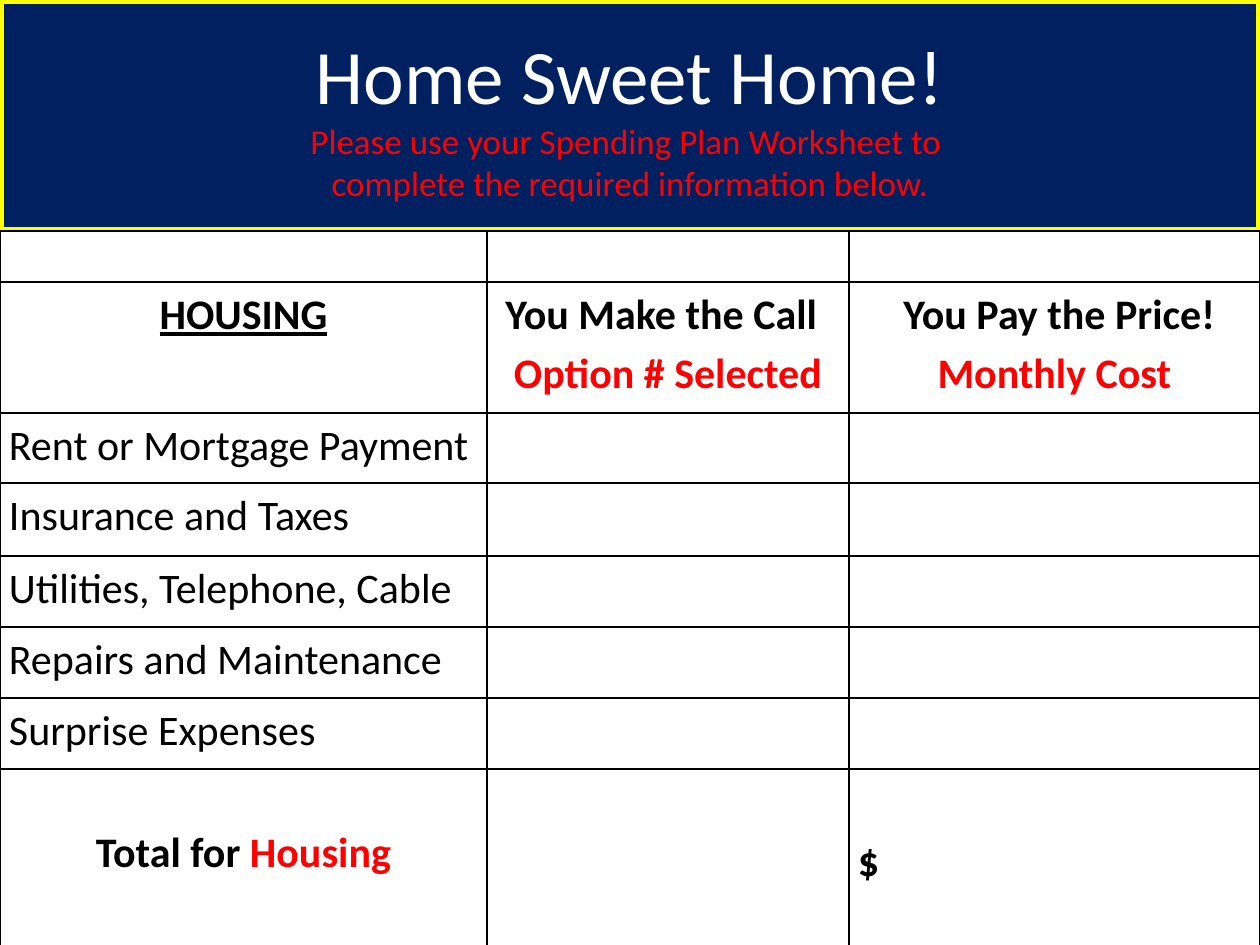
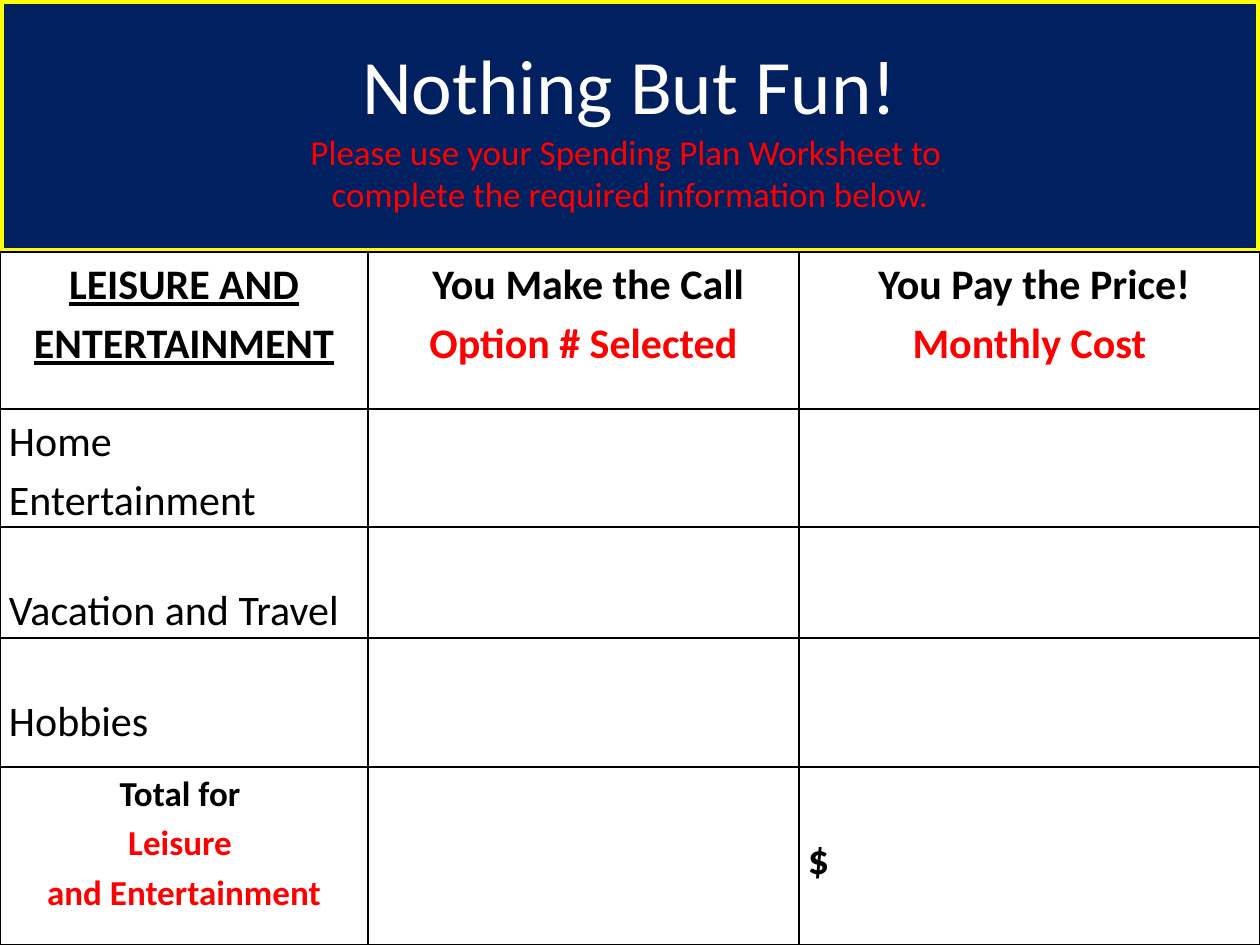
from lxml import etree
from pptx import Presentation
from pptx.dml.color import RGBColor
from pptx.enum.shapes import MSO_SHAPE
from pptx.enum.text import MSO_ANCHOR, PP_ALIGN
from pptx.oxml.ns import qn
from pptx.util import Emu, Pt

RECT = MSO_SHAPE.RECTANGLE
MIDDLE = MSO_ANCHOR.MIDDLE
LEFT, CENTER = PP_ALIGN.LEFT, PP_ALIGN.CENTER

# Shared look
EMU_PER_INCH, PX_PER_INCH = 914400, 126
SLIDE_W, SLIDE_H = 1260, 945
FONT = "Calibri"
COLORS = {
    "navy": "002060",
    "yellow": "FFFF00",
    "white": "FFFFFF",
    "black": "000000",
    "red": "FF0000",
}
INSTRUCTIONS = ["Please use your Spending Plan Worksheet to ",
                "complete the required information below."]
CELL_INSET = 9
LABEL_DROP, DOLLAR_DROP = 51, 60  # top insets of lowered cell text


def px(n):
    return Emu(round(n * EMU_PER_INCH / PX_PER_INCH))


def rgb(name):
    return RGBColor.from_string(COLORS[name])


def style_paragraph(p, size, color, align, bold=False):
    p.alignment = align
    p.font.name, p.font.size, p.font.bold = FONT, Pt(size), bold
    p.font.color.rgb = rgb(color)


# Title band
def add_title_band(slide, title, height):
    sp = slide.shapes.add_shape(RECT, 0, 0, px(SLIDE_W), px(height))
    sp.shadow.inherit = False
    sp.fill.solid()
    sp.fill.fore_color.rgb = rgb("navy")
    sp.line.color.rgb = rgb("yellow")
    sp.line.width = Pt(4.5)
    tf = sp.text_frame
    tf.word_wrap = True
    tf.vertical_anchor = MIDDLE
    for i, text in enumerate([title] + INSTRUCTIONS):
        p = tf.add_paragraph() if i else tf.paragraphs[0]
        p.add_run().text = text
        if i:
            style_paragraph(p, 20, "red", CENTER)
        else:
            style_paragraph(p, 44, "white", CENTER)


# Table cells
def set_borders(cell):
    tcPr = cell._tc.get_or_add_tcPr()
    for side in ("lnL", "lnR", "lnT", "lnB"):
        ln = etree.SubElement(tcPr, qn(f"a:{side}"), w=str(Pt(1)))
        fill = etree.SubElement(ln, qn("a:solidFill"))
        etree.SubElement(fill, qn("a:srgbClr"), val=COLORS["black"])


def format_cell(cell):
    set_borders(cell)
    cell.fill.solid()
    cell.fill.fore_color.rgb = rgb("white")
    cell.margin_left = cell.margin_right = px(CELL_INSET)
    cell.margin_top = cell.margin_bottom = 0


def write_cell(cell, lines, aligns=(LEFT,), size=24, bold=False,
               underline=False, drop=0):
    """Each line is a list of (text, color) runs; the last align repeats."""
    cell.margin_top = px(drop)
    tf = cell.text_frame
    for i, runs in enumerate(lines):
        p = tf.add_paragraph() if i else tf.paragraphs[0]
        style_paragraph(p, size, runs[0][1], aligns[min(i, len(aligns) - 1)], bold)
        p.font.underline = underline
        p.line_spacing = 1.15
        for text, color in runs:
            r = p.add_run()
            r.text = text
            r.font.color.rgb = rgb(color)


def add_grid(slide, top, cols, rows):
    shape = slide.shapes.add_table(len(rows), len(cols), 0, px(top),
                                   px(sum(cols)), px(sum(rows)))
    table = shape.table
    table.first_row = table.horz_banding = False
    for col, width in zip(table.columns, cols):
        col.width = px(width)
    for row, height in zip(table.rows, rows):
        row.height = px(height)
    for cell in table.iter_cells():
        format_cell(cell)
    return table


# Table rows
def write_header(table, row, category, call_aligns):
    write_cell(table.cell(row, 0), [[(category, "black")]], (CENTER,),
               bold=True, underline=True)
    write_cell(table.cell(row, 1), [[(" You Make the Call", "black")],
                                    [("Option # Selected", "red")]],
               call_aligns, bold=True)
    write_cell(table.cell(row, 2), [[(" You Pay the Price!", "black")],
                                    [("Monthly Cost", "red")]],
               (CENTER,), bold=True)


def write_expenses(table, first_row, expenses):
    for row, (label, drop) in enumerate(expenses, first_row):
        write_cell(table.cell(row, 0), [[(label, "black")]], drop=drop)


def write_total(table, lines, size=24, drop=0):
    last = len(table.rows) - 1
    write_cell(table.cell(last, 0), lines, (CENTER,), size, bold=True, drop=drop)
    write_cell(table.cell(last, 2), [[("$", "black")]], bold=True,
               drop=DOLLAR_DROP)


# Slides
def build_housing(slide):
    band = 231
    add_title_band(slide, "Home Sweet Home!", band)
    table = add_grid(slide, band, [487, 362, 411],
                     [51, 131, 70, 73, 71, 71, 71, 232])
    write_header(table, 1, "HOUSING", (LEFT, CENTER))
    write_expenses(table, 2, [
        ("Rent or Mortgage Payment", 0),
        ("Insurance and Taxes", 0),
        ("Utilities, Telephone, Cable", 0),
        ("Repairs and Maintenance", 0),
        ("Surprise Expenses", 0),
    ])
    write_total(table, [[("Total for ", "black"), ("Housing", "red")]],
                drop=LABEL_DROP)


def build_leisure(slide):
    band = 252
    add_title_band(slide, "Nothing But Fun!", band)
    table = add_grid(slide, band, [368, 431, 461], [157, 118, 111, 129, 178])
    write_header(table, 0, "LEISURE AND ENTERTAINMENT", (CENTER,))
    write_expenses(table, 1, [
        ("Home Entertainment", 0),
        ("Vacation and Travel", LABEL_DROP),
        ("Hobbies", LABEL_DROP),
    ])
    write_total(table, [[("Total for ", "black")],
                        [("Leisure ", "red")],
                        [("and Entertainment", "red")]], size=20)


def main():
    prs = Presentation()
    prs.slide_width, prs.slide_height = px(SLIDE_W), px(SLIDE_H)
    blank = prs.slide_layouts[6]
    for build in (build_housing, build_leisure):
        build(prs.slides.add_slide(blank))
    prs.save("out.pptx")


if __name__ == "__main__":
    main()
